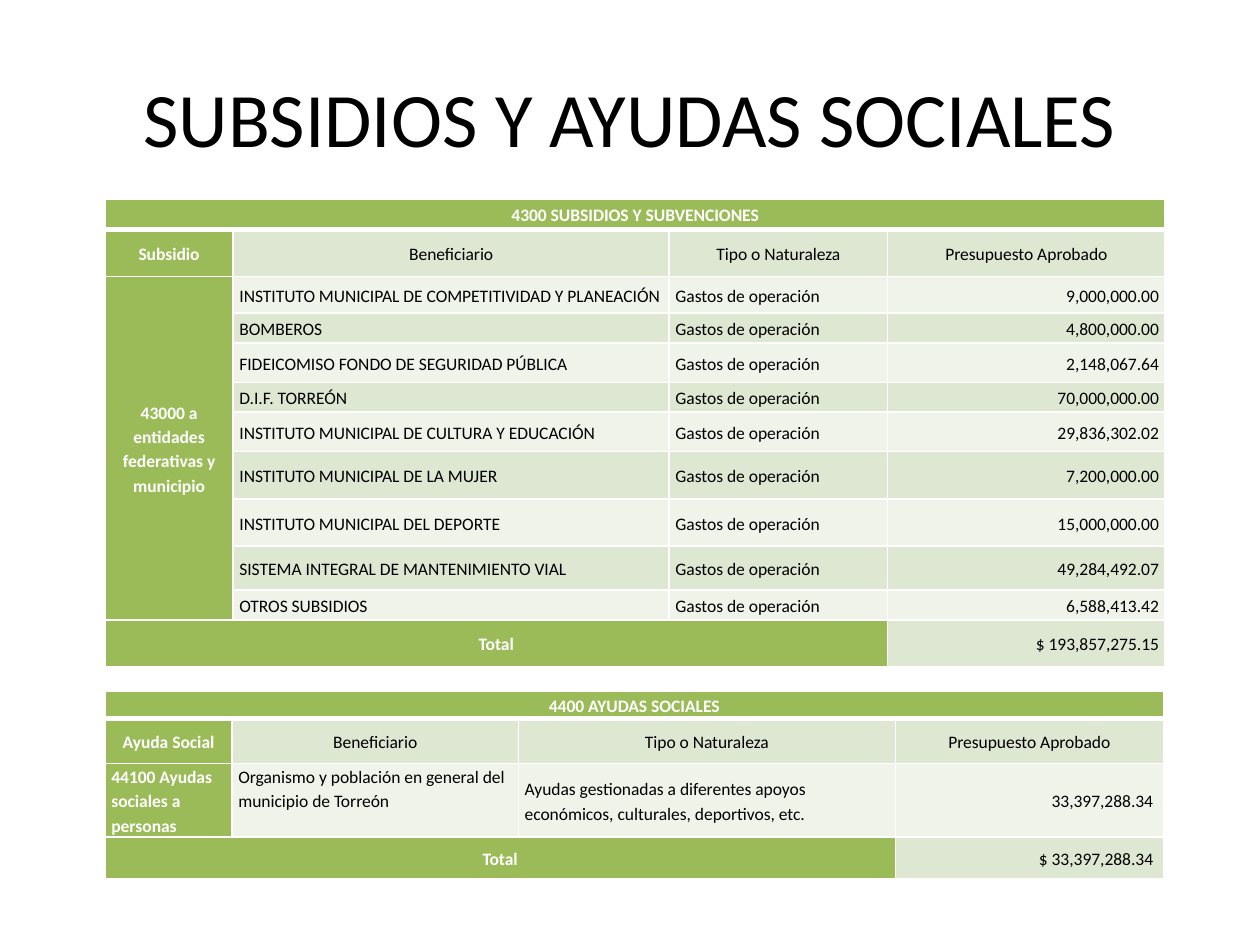
from lxml.etree import SubElement
from pptx import Presentation
from pptx.dml.color import RGBColor
from pptx.enum.text import MSO_ANCHOR, PP_ALIGN
from pptx.oxml.ns import qn
from pptx.util import Pt

COLORS = {"green": "9BBB59", "dark_band": "DEE7D1", "light_band": "EFF3EA",
          "white": "FFFFFF", "black": "000000"}
COLUMN_TITLES = ["Beneficiario", "Tipo o Naturaleza", "Presupuesto Aprobado"]
SUBSIDIES = [
    ("INSTITUTO MUNICIPAL DE COMPETITIVIDAD Y PLANEACIÓN", "9,000,000.00"),
    ("BOMBEROS", "4,800,000.00"),
    ("FIDEICOMISO FONDO DE SEGURIDAD PÚBLICA", "2,148,067.64"),
    ("D.I.F. TORREÓN", "70,000,000.00"),
    ("INSTITUTO MUNICIPAL DE CULTURA Y EDUCACIÓN", "29,836,302.02"),
    ("INSTITUTO MUNICIPAL DE LA MUJER", "7,200,000.00"),
    ("INSTITUTO MUNICIPAL DEL DEPORTE", "15,000,000.00"),
    ("SISTEMA INTEGRAL DE MANTENIMIENTO VIAL", "49,284,492.07"),
    ("OTROS SUBSIDIOS", "6,588,413.42"),
]
SUBSIDY_HEIGHTS = [17, 27, 21, 17, 22.6, 17, 22.6, 27, 27, 25.2, 17, 26.6]
AID_HEIGHTS = [15.4, 26, 42, 23.6]


def write_text(frame, text, size=10, color="black", bold=False,
               align=PP_ALIGN.LEFT, line_spacing=None):
    """Write one formatted paragraph into a text frame."""
    para = frame.paragraphs[0]
    para.alignment = align
    if line_spacing:
        para.line_spacing = line_spacing
    span = para.add_run()
    span.text = text
    span.font.name = "Calibri"
    span.font.size = Pt(size)
    span.font.bold = bold
    span.font.color.rgb = RGBColor.from_string(COLORS[color])


def add_title(page, text):
    """Place the slide title."""
    title = page.shapes.title
    title.left, title.top, title.width, title.height = Pt(36), Pt(21.6), Pt(648), Pt(90)
    title.text_frame.vertical_anchor = MSO_ANCHOR.MIDDLE
    write_text(title.text_frame, text, size=44, align=PP_ALIGN.CENTER)


def set_borders(cell, top=1, bottom=1):
    """Draw white borders around a cell."""
    properties = cell._tc.get_or_add_tcPr()
    for side, width in (("L", 1), ("R", 1), ("T", top), ("B", bottom)):
        line = SubElement(properties, qn(f"a:ln{side}"), w=str(Pt(width)))
        fill = SubElement(line, qn("a:solidFill"))
        SubElement(fill, qn("a:srgbClr"), val=COLORS["white"])


def format_cell(cell, fill, right_margin):
    """Set the margins, anchor and fill of a cell."""
    cell.margin_left, cell.margin_right = Pt(3.6), Pt(right_margin)
    cell.margin_top = cell.margin_bottom = 0
    cell.vertical_anchor = MSO_ANCHOR.MIDDLE
    cell.fill.solid()
    cell.fill.fore_color.rgb = RGBColor.from_string(COLORS[fill])


def add_budget_table(page, top, widths, heights, rows, amount_margin=3.6):
    """Add a table with a heading row, a label column and a total row."""
    last = len(rows) - 1
    box = page.shapes.add_table(len(rows), len(widths), Pt(60), Pt(top),
                                Pt(sum(widths)), Pt(sum(heights)))
    table = box.table
    table.first_row = table.horz_banding = False
    for column, width in zip(table.columns, widths):
        column.width = Pt(width)
    for row, height in zip(table.rows, heights):
        row.height = Pt(height)
    table.cell(0, 0).merge(table.cell(0, 3))
    table.cell(last, 0).merge(table.cell(last, 2))
    if last > 3:
        table.cell(2, 0).merge(table.cell(last - 1, 0))
    for r, texts in enumerate(rows):
        for c, text in enumerate(texts):
            cell = table.cell(r, c)
            label = r == 0 or c == 0 or (r == last and c < 3)
            amount = r > 1 and c == 3
            band = "dark_band" if r % 2 else "light_band"
            set_borders(cell, top=3 if r == 1 else 1, bottom=3 if r == 0 else 1)
            format_cell(cell, "green" if label else band,
                        amount_margin if amount else 3.6)
            if text:
                align = PP_ALIGN.RIGHT if amount else PP_ALIGN.CENTER if r < 2 or label else PP_ALIGN.LEFT
                write_text(cell.text_frame, text, color="white" if label else "black",
                           bold=label, align=align, line_spacing=1.15)
    return table


def main():
    """Build the slide and save it."""
    deck = Presentation()
    deck.slide_width, deck.slide_height = Pt(720), Pt(540)
    page = deck.slides.add_slide(deck.slide_layouts[5])
    add_title(page, "SUBSIDIOS Y AYUDAS SOCIALES")

    aid_rows = [
        ["4400 AYUDAS SOCIALES", "", "", ""],
        ["Ayuda Social", *COLUMN_TITLES],
        ["44100 Ayudas sociales a personas",
         "Organismo y población en general del municipio de Torreón",
         "Ayudas gestionadas a diferentes apoyos económicos, culturales, deportivos, etc.",
         "33,397,288.34"],
        ["Total", "", "", "$ 33,397,288.34"],
    ]
    aid = add_budget_table(page, 395, [72.6, 163.6, 215.4, 153.2], AID_HEIGHTS,
                           aid_rows, amount_margin=5.9)
    aid.cell(2, 0).text_frame.paragraphs[0].alignment = PP_ALIGN.LEFT
    aid.cell(2, 1).vertical_anchor = MSO_ANCHOR.TOP

    subsidy_rows = [["4300 SUBSIDIOS Y SUBVENCIONES", "", "", ""],
                    ["Subsidio", *COLUMN_TITLES]]
    subsidy_rows += [["", name, "Gastos de operación", amount] for name, amount in SUBSIDIES]
    subsidy_rows[2][0] = "43000 a entidades federativas y municipio"
    subsidy_rows.append(["Total", "", "", "$ 193,857,275.15"])
    subsidies = add_budget_table(page, 114, [73.2, 249.2, 124.8, 158.6],
                                 SUBSIDY_HEIGHTS, subsidy_rows)
    subsidies.cell(0, 0).text_frame.paragraphs[0].space_after = Pt(10)
    deck.save("out.pptx")


if __name__ == "__main__":
    main()
